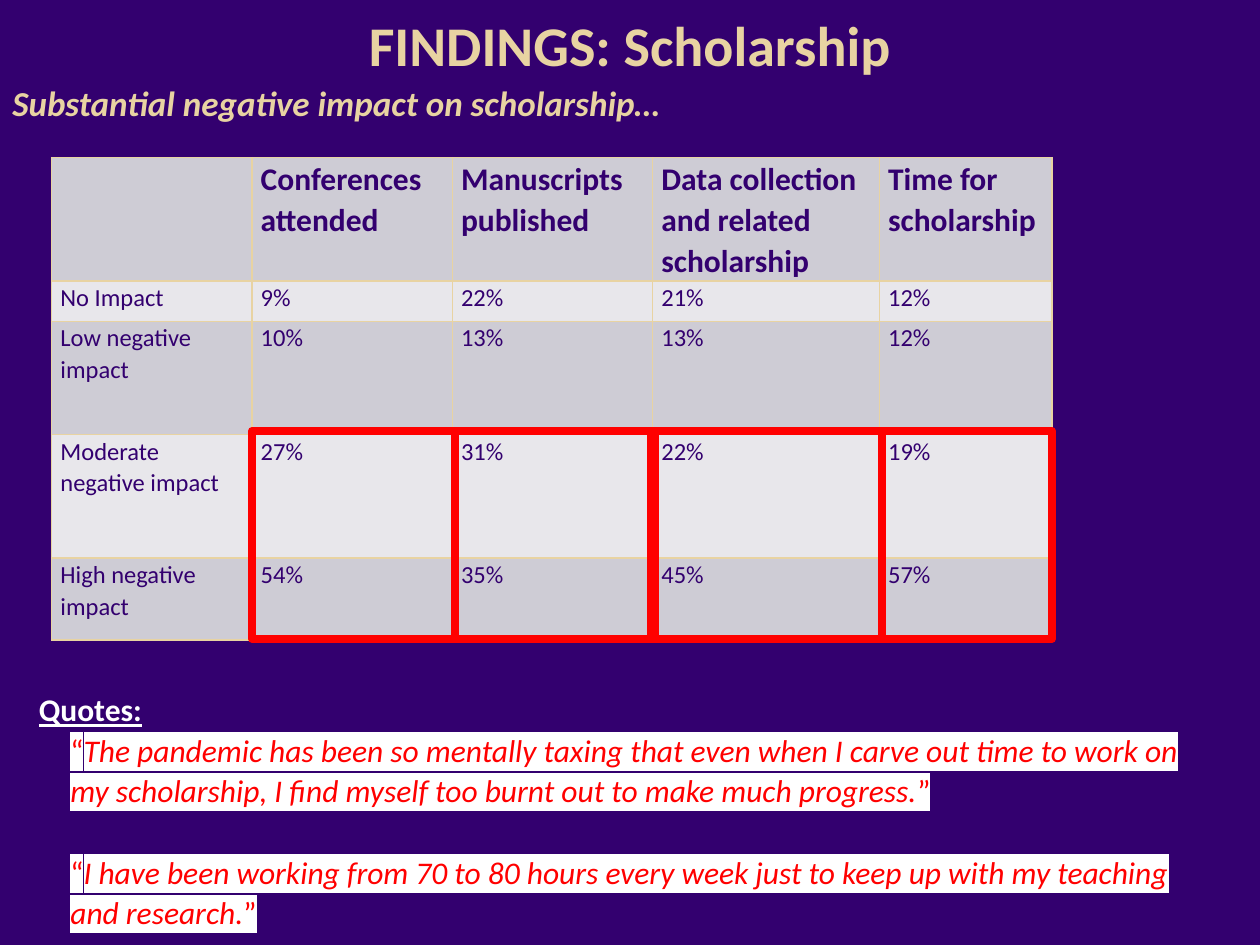
from lxml import etree
from pptx import Presentation
from pptx.dml.color import RGBColor
from pptx.enum.shapes import MSO_SHAPE
from pptx.enum.text import MSO_ANCHOR, MSO_AUTO_SIZE, PP_ALIGN
from pptx.oxml.ns import qn
from pptx.util import Inches, Pt

PURPLE = RGBColor(0x33, 0x00, 0x6F)
GOLD = RGBColor(0xE8, 0xD3, 0xA2)
GREY = RGBColor(0xCE, 0xCC, 0xD5)
PALE = RGBColor(0xE8, 0xE7, 0xEB)
RED = RGBColor(0xFF, 0x00, 0x00)
WHITE = RGBColor(0xFF, 0xFF, 0xFF)
RECTANGLE = MSO_SHAPE.RECTANGLE
TOP, MIDDLE = MSO_ANCHOR.TOP, MSO_ANCHOR.MIDDLE
FIT_SHAPE = MSO_AUTO_SIZE.SHAPE_TO_FIT_TEXT
CENTER = PP_ALIGN.CENTER
TITLE_ONLY = 5

COLUMNS = [1.59, 1.59, 1.59, 1.8, 1.37]
ROWS = [0.98, 0.32, 0.9, 0.98, 0.65]
IMPACT = [
    ["", "Conferences attended", "Manuscripts published",
     "Data collection and related scholarship", "Time for scholarship"],
    ["No Impact", "9%", "22%", "21%", "12%"],
    ["Low negative impact", "10%", "13%", "13%", "12%"],
    ["Moderate negative impact", "27%", "31%", "22%", "19%"],
    ["High negative impact", "54%", "35%", "45%", "57%"],
]
FRAMES = [(2, 1.61), (7, 1.35), (5.17, 1.83), (3.61, 1.59)]
QUOTES = [
    "The pandemic has been so mentally taxing that even when I carve out time "
    "to work on my scholarship, I find myself too burnt out to make much progress.",
    "I have been working from 70 to 80 hours every week just to keep up with "
    "my teaching and research.",
]


def add_color(parent, tag, color):
    node = etree.SubElement(parent, qn(tag))
    etree.SubElement(node, qn("a:srgbClr"), val=str(color))


class Deck:
    font_name = "Calibri"

    def __init__(self):
        self.prs = Presentation()
        self.prs.slide_width = Inches(10)
        self.prs.slide_height = Inches(7.5)
        self.slide = self.prs.slides.add_slide(self.prs.slide_layouts[TITLE_ONLY])
        fill = self.slide.background.fill
        fill.solid()
        fill.fore_color.rgb = PURPLE

    def style(self, p, size, color, bold=False):
        p.font.name = self.font_name
        p.font.size = Pt(size)
        p.font.bold = bold
        p.font.color.rgb = color

    def title(self, text, left, top, width, height):
        sp = self.slide.shapes.title
        sp.left, sp.top = Inches(left), Inches(top)
        sp.width, sp.height = Inches(width), Inches(height)
        tf = sp.text_frame
        tf.auto_size = FIT_SHAPE
        tf.vertical_anchor = MIDDLE
        tf.text = text
        p = tf.paragraphs[0]
        p.alignment = CENTER
        self.style(p, 32, GOLD, bold=True)

    def text_box(self, text, left, top, width, height, size, color):
        sp = self.slide.shapes.add_textbox(
            Inches(left), Inches(top), Inches(width), Inches(height))
        tf = sp.text_frame
        tf.word_wrap = True
        tf.vertical_anchor = TOP
        p = tf.paragraphs[0]
        p.text = text
        self.style(p, size, color, bold=True)
        return tf

    def quote(self, tf, text, gap):
        p = tf.add_paragraph()
        p.line_spacing = 1.07
        p.space_before = Pt(gap)
        p._p.get_or_add_pPr().set("marL", str(Inches(0.25)))
        self.style(p, 18, RED)
        for part, italic in (("“", False), (text, True), ("”", False)):
            r = p.add_run()
            r.text = part
            r.font.italic = italic
            add_color(r._r.get_or_add_rPr(), "a:highlight", WHITE)

    def cell(self, cell, text, fill, size, bold):
        tc_pr = cell._tc.get_or_add_tcPr()
        for side in ("a:lnL", "a:lnR", "a:lnT", "a:lnB"):
            line = etree.SubElement(tc_pr, qn(side), w=str(Pt(1)))
            add_color(line, "a:solidFill", GOLD)
        cell.fill.solid()
        cell.fill.fore_color.rgb = fill
        cell.margin_left = cell.margin_right = Inches(0.07)
        cell.margin_top = cell.margin_bottom = 0
        p = cell.text_frame.paragraphs[0]
        p.text = text
        p.line_spacing = 1.07
        p.space_after = Pt(8)
        self.style(p, size, PURPLE, bold)

    def table(self, data, left, top, columns, rows):
        table = self.slide.shapes.add_table(
            len(rows), len(columns), Inches(left), Inches(top),
            Inches(sum(columns)), Inches(sum(rows))).table
        table.first_row = table.horz_banding = False
        for column, width in zip(table.columns, columns):
            column.width = Inches(width)
        for i, (row, height) in enumerate(zip(table.rows, rows)):
            row.height = Inches(height)
            header = i == 0
            for cell, text in zip(row.cells, data[i]):
                self.cell(cell, text, PALE if i % 2 else GREY,
                          18 if header else 14, header)

    def frame(self, left, top, width, height):
        sp = self.slide.shapes.add_shape(
            RECTANGLE, Inches(left), Inches(top), Inches(width), Inches(height))
        sp.shadow.inherit = False
        sp.fill.background()
        sp.line.color.rgb = RED
        sp.line.width = Pt(4.5)


def main():
    deck = Deck()
    deck.text_box("Substantial negative impact on scholarship…",
                  0, 0.6, 10, 6.9, 20, GOLD).paragraphs[0].font.italic = True
    deck.title("FINDINGS: Scholarship", 0, 0.03, 10, 0.64)
    deck.table(IMPACT, 0.41, 1.25, COLUMNS, ROWS)
    for left, width in FRAMES:
        deck.frame(left, 3.42, width, 1.65)
    tf = deck.text_box("Quotes:", 0.21, 5.43, 9.38, 2.05, 18, WHITE)
    tf.paragraphs[0].font.underline = True
    for text, gap in zip(QUOTES, (0, 23.5)):
        deck.quote(tf, text, gap)
    deck.prs.save("out.pptx")


if __name__ == "__main__":
    main()
